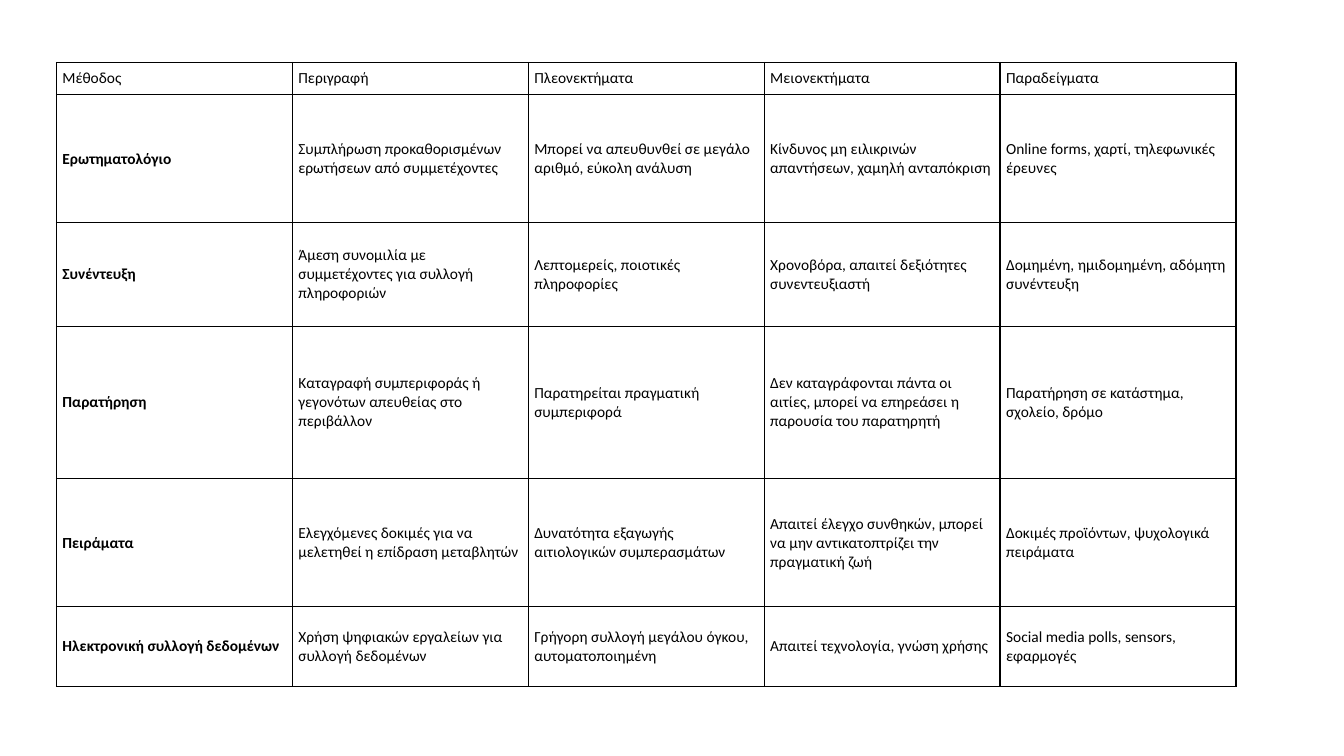
import pptx
import pptx.util
import pptx.dml.color
import pptx.enum.text
import pptx.oxml
import pptx.oxml.ns
from pptx.util import Inches

METHODS = [
    ("Μέθοδος", "Περιγραφή", "Πλεονεκτήματα", "Μειονεκτήματα", "Παραδείγματα"),
    ("Ερωτηματολόγιο",
     "Συμπλήρωση προκαθορισμένων ερωτήσεων από συμμετέχοντες",
     "Μπορεί να απευθυνθεί σε μεγάλο αριθμό, εύκολη ανάλυση",
     "Κίνδυνος μη ειλικρινών απαντήσεων, χαμηλή ανταπόκριση",
     "Online forms, χαρτί, τηλεφωνικές έρευνες"),
    ("Συνέντευξη",
     "Άμεση συνομιλία με συμμετέχοντες για συλλογή πληροφοριών",
     "Λεπτομερείς, ποιοτικές πληροφορίες",
     "Χρονοβόρα, απαιτεί δεξιότητες συνεντευξιαστή",
     "Δομημένη, ημιδομημένη, αδόμητη συνέντευξη"),
    ("Παρατήρηση",
     "Καταγραφή συμπεριφοράς ή γεγονότων απευθείας στο περιβάλλον",
     "Παρατηρείται πραγματική συμπεριφορά",
     "Δεν καταγράφονται πάντα οι αιτίες, μπορεί να επηρεάσει η παρουσία του παρατηρητή",
     "Παρατήρηση σε κατάστημα, σχολείο, δρόμο"),
    ("Πειράματα",
     "Ελεγχόμενες δοκιμές για να μελετηθεί η επίδραση μεταβλητών",
     "Δυνατότητα εξαγωγής αιτιολογικών συμπερασμάτων",
     "Απαιτεί έλεγχο συνθηκών, μπορεί να μην αντικατοπτρίζει την πραγματική ζωή",
     "Δοκιμές προϊόντων, ψυχολογικά πειράματα"),
    ("Ηλεκτρονική συλλογή δεδομένων",
     "Χρήση ψηφιακών εργαλείων για συλλογή δεδομένων",
     "Γρήγορη συλλογή μεγάλου όγκου, αυτοματοποιημένη",
     "Απαιτεί τεχνολογία, γνώση χρήσης",
     "Social media polls, sensors, εφαρμογές"),
]
ROW_HEIGHTS = [0.32, 1.27, 1.03, 1.51, 1.27, 0.79]
COLUMN_WIDTH = 2.34
LEFT, TOP = 0.56, 0.62
INK = "000000"


def color(value):
    return pptx.dml.color.RGBColor.from_string(value)


def add_borders(cell):
    properties = cell._tc.get_or_add_tcPr()
    for position, side in enumerate(("lnL", "lnR", "lnT", "lnB")):
        properties.insert(position, pptx.oxml.parse_xml(
            f'<a:{side} {pptx.oxml.ns.nsdecls("a")} w="{pptx.util.Pt(1)}">'
            f'<a:solidFill><a:srgbClr val="{INK}"/></a:solidFill>'
            f'<a:prstDash val="solid"/></a:{side}>'))


def write_cell(cell, wording, bold):
    cell.fill.background()
    add_borders(cell)
    cell.vertical_anchor = pptx.enum.text.MSO_ANCHOR.MIDDLE
    cell.margin_left = cell.margin_right = Inches(0.06)
    cell.margin_top = cell.margin_bottom = Inches(0.03)
    run = cell.text_frame.paragraphs[0].add_run()
    run.text = wording
    run.font.name = "Calibri"
    run.font.size = pptx.util.Pt(11)
    run.font.bold = bold
    run.font.color.rgb = color(INK)


def main():
    deck = pptx.Presentation()
    deck.slide_width, deck.slide_height = Inches(13.33), Inches(7.5)
    slide = deck.slides.add_slide(deck.slide_layouts[6])
    column_count = len(METHODS[0])
    comparison = slide.shapes.add_table(
        len(METHODS), column_count, Inches(LEFT), Inches(TOP),
        Inches(COLUMN_WIDTH * column_count), Inches(sum(ROW_HEIGHTS))).table
    comparison.first_row = comparison.horz_banding = False
    for column in comparison.columns:
        column.width = Inches(COLUMN_WIDTH)
    for r, (method, height) in enumerate(zip(METHODS, ROW_HEIGHTS)):
        comparison.rows[r].height = Inches(height)
        for c, wording in enumerate(method):
            write_cell(comparison.cell(r, c), wording, r > 0 and c == 0)
    deck.save("out.pptx")


if __name__ == "__main__":
    main()
